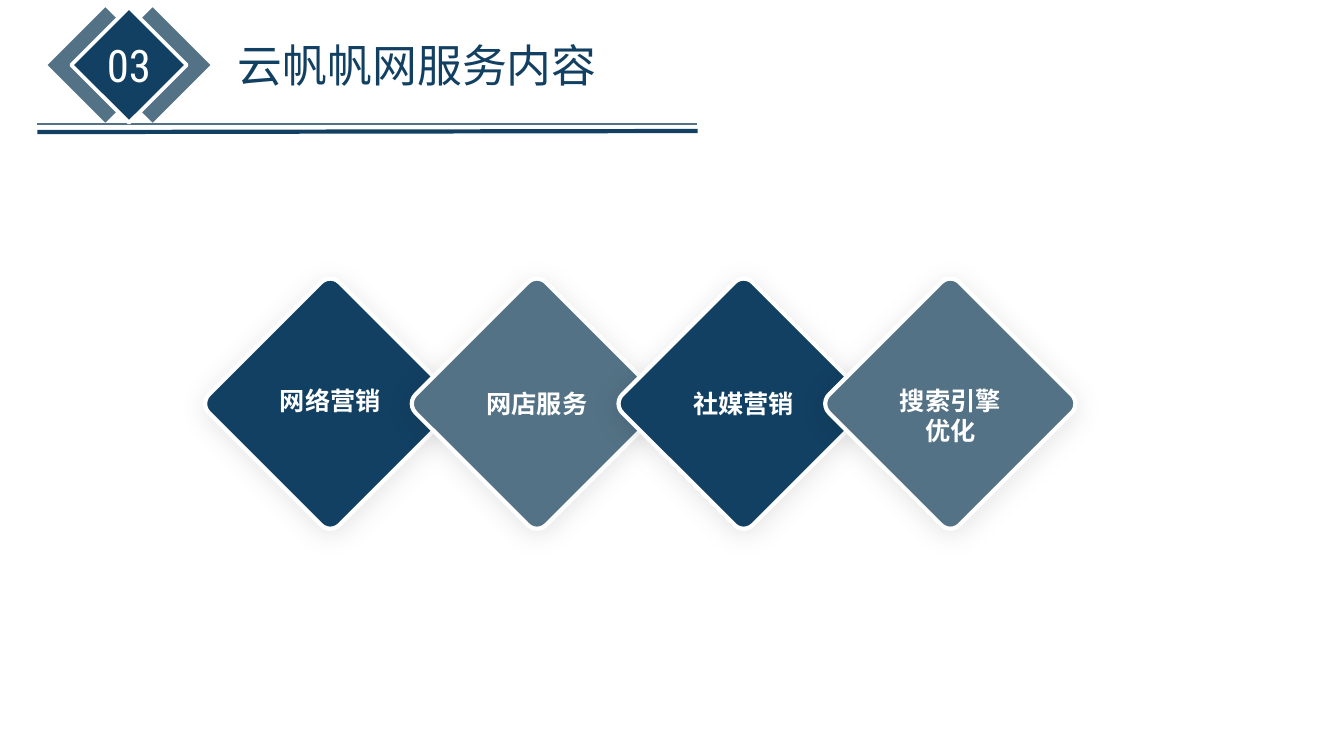
from dataclasses import dataclass

import pptx
import pptx.dml.color
import pptx.enum.shapes
import pptx.enum.text
import pptx.oxml
import pptx.oxml.ns
import pptx.util

SHAPE = pptx.enum.shapes.MSO_SHAPE
ALIGN = pptx.enum.text.PP_ALIGN
A = 'xmlns:a="http://schemas.openxmlformats.org/drawingml/2006/main"'


@dataclass(frozen=True)
class Theme:
    navy: str = "124062"
    slate: str = "537285"
    white: str = "FFFFFF"
    cjk: str = "Noto Sans CJK SC"
    digits: str = "Roboto Condensed"
    heading: int = 32
    label: int = 18


def rgb(value):
    return pptx.dml.color.RGBColor.from_string(value)


class Deck:
    """One slide; positions and sizes are percentages of its width and height."""

    def __init__(self, theme):
        self.theme = theme
        self.prs = pptx.Presentation()
        self.prs.slide_width = pptx.util.Inches(13.33)
        self.prs.slide_height = pptx.util.Inches(7.5)
        self.s = self.prs.slides.add_slide(self.prs.slide_layouts[5])

    def x(self, share):
        return round(self.prs.slide_width * share / 100)

    def y(self, share):
        return round(self.prs.slide_height * share / 100)

    def box(self, left, top, width, height):
        return self.x(left), self.y(top), self.x(width), self.y(height)

    def diamond(self, cx, cy, side, fill, outline=0, corner=0, shadow=False):
        """Place a square turned by 45 degrees; side is a share of the height."""
        size = self.y(side)
        sp = self.s.shapes.add_shape(SHAPE.ROUNDED_RECTANGLE, self.x(cx) - size // 2,
                                     self.y(cy) - size // 2, size, size)
        sp.rotation = 45
        sp.adjustments[0] = corner
        sp.shadow.inherit = False
        sp.fill.solid()
        sp.fill.fore_color.rgb = rgb(fill)
        if outline:
            sp.line.color.rgb = rgb(self.theme.white)
            sp.line.width = pptx.util.Pt(outline)
        else:
            sp.line.fill.background()
        if shadow:
            self.floor_shadow(sp)

    def floor_shadow(self, sp):
        """Add a soft, flattened shadow under the shape."""
        effects = sp._element.spPr.find(pptx.oxml.ns.qn("a:effectLst"))
        effects.append(pptx.oxml.parse_xml(
            f'<a:outerShdw {A} blurRad="241300" dist="38100" dir="5400000" '
            'sy="23000" algn="b" rotWithShape="0"><a:srgbClr val="000000">'
            '<a:alpha val="10000"/></a:srgbClr></a:outerShdw>'))

    def rule(self, x1, y1, x2, y2, color, width):
        line = self.s.shapes.add_connector(
            pptx.enum.shapes.MSO_CONNECTOR.STRAIGHT,
            self.x(x1), self.y(y1), self.x(x2), self.y(y2))
        line.line.color.rgb = rgb(color)
        line.line.width = pptx.util.Pt(width)
        line._element.spPr.append(pptx.oxml.parse_xml(f"<a:effectLst {A}/>"))

    def add_run(self, sp, text, size, color, font, align, bold=False):
        tf = sp.text_frame
        tf.word_wrap = True
        tf.auto_size = pptx.enum.text.MSO_AUTO_SIZE.NONE
        tf.vertical_anchor = pptx.enum.text.MSO_ANCHOR.TOP
        p = tf.paragraphs[0]
        p.alignment = align
        r = p.add_run()
        r.text = text
        r.font.size = pptx.util.Pt(size)
        r.font.bold = bold
        r.font.color.rgb = rgb(color)
        r.font.name = font
        r.font._element.append(pptx.oxml.parse_xml(f'<a:ea {A} typeface="{font}"/>'))

    def title(self, text, *box):
        sp = self.s.shapes.title
        sp.left, sp.top, sp.width, sp.height = self.box(*box)
        self.add_run(sp, text, self.theme.heading, self.theme.navy,
                     self.theme.cjk, ALIGN.LEFT)

    def text(self, text, cx, top, width, height, size, font, bold=False):
        """Add white text centred on cx."""
        sp = self.s.shapes.add_textbox(*self.box(cx - width / 2, top, width, height))
        self.add_run(sp, text, size, self.theme.white, font, ALIGN.CENTER, bold)


def main():
    theme = Theme()
    deck = Deck(theme)

    badge_x, badge_y, badge_side, wing = 9.6, 8.6, 10.8, 1.76
    deck.title("云帆帆网服务内容", 16.95, 4.27, 53.33, 8.53)
    deck.rule(51.83, 16.4, 2.78, 16.4, theme.slate, 1)
    for offset in (wing, -wing):
        deck.diamond(badge_x + offset, badge_y, badge_side, theme.slate)
    deck.diamond(badge_x, badge_y, badge_side, theme.navy, outline=2.75)
    deck.text("03", badge_x, 4.27, 5.03, 8.53, theme.heading, theme.digits)
    deck.rule(51.9, 17.33, 2.78, 17.47, theme.navy, 3)

    # label, top, height
    services = [("网络营销", 50.27, 5.33), ("网店服务", 50.67, 5.33),
                ("社媒营销", 50.67, 5.33), ("搜索引擎优化", 50.27, 9.47)]
    first, step = 24.57, 15.38
    for i, (label, top, height) in enumerate(services):
        deck.diamond(first + i * step, 53.4, 24.4, (theme.navy, theme.slate)[i % 2],
                     outline=3, corner=0.07, shadow=True)
    for i, (label, top, height) in enumerate(services):
        deck.text(label, first + i * step, top, 10.5, height,
                  theme.label, theme.cjk, bold=True)

    deck.prs.save("out.pptx")


if __name__ == "__main__":
    main()
